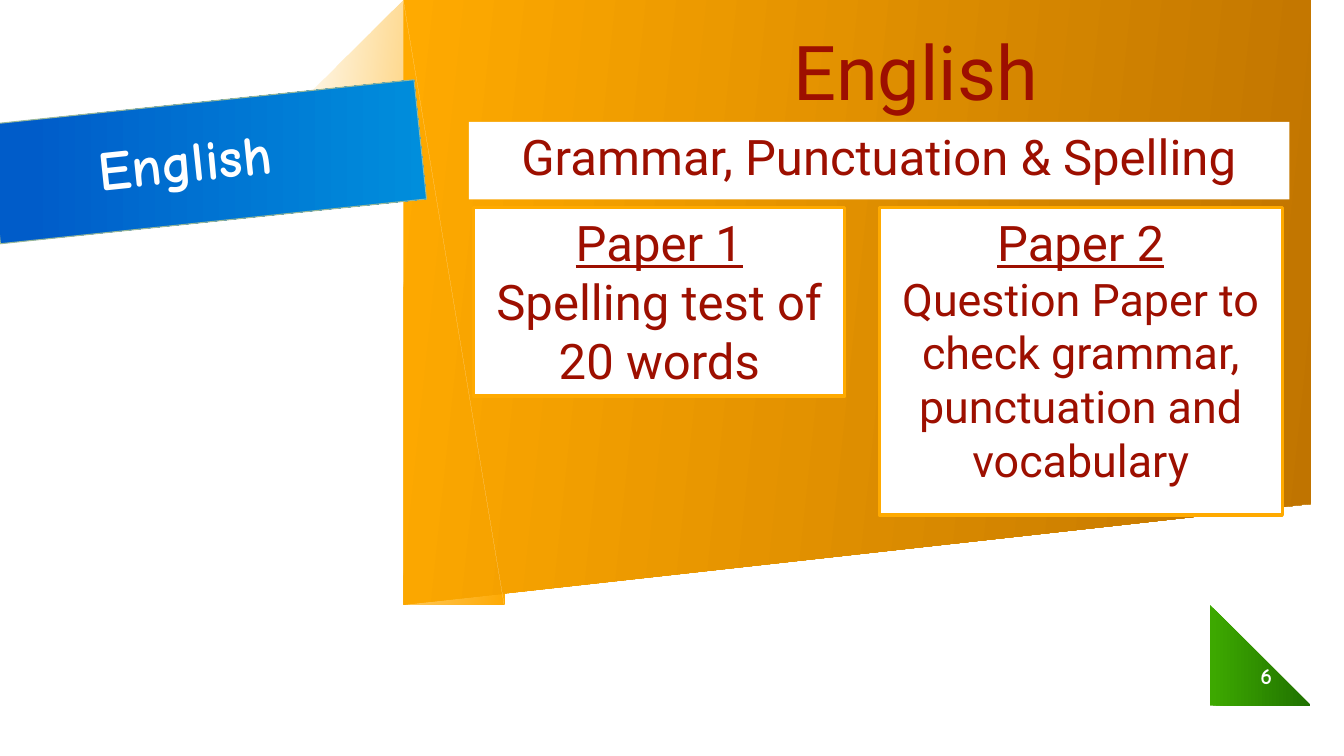
import pptx
import pptx.util
from lxml import etree
from pptx.dml.color import RGBColor
from pptx.enum.shapes import MSO_SHAPE
from pptx.enum.text import MSO_ANCHOR, PP_ALIGN
from pptx.oxml.ns import qn
from pptx.util import Inches, Pt

WHITE = RGBColor(0xFF, 0xFF, 0xFF)
MAROON = RGBColor(0x9D, 0x0F, 0x00)
AMBER = RGBColor(0xFF, 0xAA, 0x00)
BROWN = RGBColor(0xC0, 0x74, 0x00)
LEAF = RGBColor(0x3D, 0xA8, 0x00)
FOREST = RGBColor(0x1F, 0x71, 0x00)
NAVY = RGBColor(0x00, 0x5C, 0xC9)
SKY = RGBColor(0x00, 0x8E, 0xDC)
SAGE = RGBColor(0x99, 0xB8, 0x98)

# Gradient stops: position %, colour, opacity %
GREEN_SHADE = [(0, LEAF, 6), (3, LEAF, 6), (100, LEAF, 50)]
GREEN_FADE = [(0, LEAF, 100), (3, LEAF, 100), (100, FOREST, 100)]
AMBER_SHADE = [(0, AMBER, 5), (100, AMBER, 100)]
AMBER_FADE = [(0, AMBER, 100), (100, BROWN, 100)]
BLUE_FADE = [(0, NAVY, 100), (9, NAVY, 100), (100, SKY, 100)]

# Outlines in inches: two numbers are a corner, six are a Bezier curve
BACKDROP = [
    ([(12.02, 7.13), (12.02, 7.13, 12.78, 7.18, 13.33, 7.35), (13.33, 6.68),
      (12.72, 6.51, 12.24, 6.52, 12.24, 6.52)], GREEN_SHADE, 0),
    ([(13.33, 6.62), (12.22, 6.22), (12, 6.83), (13.33, 7.31)], GREEN_FADE, 0),
    ([(4.79, 0), (4.35, 0.15, 3.4, 0.54, 3.4, 0.54),
      (3.4, 0.54, 4.03, 2.07, 4.38, 6.19), (4.56, 6.12, 5.17, 5.99, 5.17, 5.99),
      (5.17, 5.99, 5.02, 0.61, 5.01, 0)], AMBER_SHADE, 6),
    ([(13.33, 5.08), (13.33, 0), (3.93, 0), (4.39, 6.21)], AMBER_FADE, 6),
    ([(13.33, 4.77), (4.62, 5.87), (4.19, 0), (4.17, 0), (4.6, 5.9),
      (13.33, 4.8)], WHITE, 0),
]

# Paragraphs: text, size, underlined
SUBJECT = "English"
TOPIC = [("Grammar, Punctuation & Spelling", 35, False)]
PAPERS = [
    ((4.7, 2.06, 3.68, 1.87),
     [("Paper 1", 35, True), ("Spelling test of 20 words", 35, False)]),
    ((8.72, 2.06, 4, 3.05),
     [("Paper 2", 35, True),
      ("Question Paper to check grammar, punctuation and vocabulary", 32, False)]),
]
PAGE_NUMBER = "6"
CURVE_STEPS = 16


def flatten(outline):
    """Turn corners and curves into one list of points."""
    points = []
    for step in outline:
        if len(step) == 2:
            points.append(step)
            continue
        controls = [points[-1], step[0:2], step[2:4], step[4:6]]
        for i in range(1, CURVE_STEPS + 1):
            t = i / CURVE_STEPS
            weights = ((1 - t) ** 3, 3 * t * (1 - t) ** 2, 3 * t * t * (1 - t), t ** 3)
            points.append(tuple(sum(w * c[axis] for w, c in zip(weights, controls))
                                for axis in (0, 1)))
    return points


def paint(shape, fill, angle=0, line=None, line_width=0):
    """Fill with a colour or gradient stops, and outline when asked."""
    shape.shadow.inherit = False
    if isinstance(fill, RGBColor):
        shape.fill.solid()
        shape.fill.fore_color.rgb = fill
    else:
        shape.fill.background()
        gradient = etree.Element(qn("a:gradFill"), rotWithShape="1")
        stops = etree.SubElement(gradient, qn("a:gsLst"))
        for position, color, opacity in fill:
            stop = etree.SubElement(stops, qn("a:gs"), pos=str(position * 1000))
            srgb = etree.SubElement(stop, qn("a:srgbClr"), val=str(color))
            if opacity < 100:
                etree.SubElement(srgb, qn("a:alpha"), val=str(opacity * 1000))
        etree.SubElement(gradient, qn("a:lin"), ang=str(angle * 60000), scaled="0")
        properties = shape.element.spPr
        properties.replace(properties.find(qn("a:noFill")), gradient)
    if line is None:
        shape.line.fill.background()
    else:
        shape.line.color.rgb = line
        shape.line.width = Pt(line_width)


def write(shape, paragraphs, font="Roboto", color=MAROON, bold=False,
          align=PP_ALIGN.CENTER, anchor=MSO_ANCHOR.TOP, left_inset=0.1, spacing=None):
    frame = shape.text_frame
    frame.word_wrap = True
    frame.vertical_anchor = anchor
    frame.margin_left = Inches(left_inset)
    for i, (text, size, underlined) in enumerate(paragraphs):
        paragraph = frame.add_paragraph() if i else frame.paragraphs[0]
        paragraph.alignment = align
        if spacing:
            paragraph.line_spacing = spacing
        run = paragraph.add_run()
        run.text = text
        run.font.name = font
        run.font.size = Pt(size)
        run.font.bold = bold
        run.font.underline = underlined
        run.font.color.rgb = color


def main():
    deck = pptx.Presentation()
    deck.slide_width, deck.slide_height = Inches(13.33), Inches(7.5)
    shapes = deck.slides.add_slide(deck.slide_layouts[6]).shapes

    def box(place):
        return shapes.add_shape(MSO_SHAPE.RECTANGLE, *map(Inches, place))

    def label(place):
        return shapes.add_textbox(*map(Inches, place))

    for outline, fill, angle in BACKDROP:
        start, *rest = flatten(outline)
        builder = shapes.build_freeform(*start, scale=Inches(1))
        builder.add_line_segments(rest, close=True)
        paint(builder.convert_to_shape(), fill, angle)

    write(label((12.21, 6.5, 0.7, 0.4)), [(PAGE_NUMBER, 16, False)],
          font="Comic Neue", color=WHITE, bold=True, anchor=MSO_ANCHOR.MIDDLE)

    banner = box((-0.07, 1.01, 4.25, 1.19))
    banner.rotation = 354
    paint(banner, BLUE_FADE, 6, SAGE, 0.75)
    write(banner, [(SUBJECT, 40, False)], font="Comic Neue", color=WHITE, bold=True,
          align=PP_ALIGN.LEFT, anchor=MSO_ANCHOR.MIDDLE, left_inset=1.04, spacing=0.9)

    write(label((5.82, 0.2, 6.52, 1.01)), [(SUBJECT, 54, False)])

    topic = box((4.65, 1.21, 8.14, 0.77))
    paint(topic, WHITE)
    write(topic, TOPIC)

    for place, paragraphs in PAPERS:
        paper = box(place)
        paint(paper, WHITE, line=AMBER, line_width=2.25)
        write(paper, paragraphs)

    deck.save("out.pptx")


if __name__ == "__main__":
    main()
